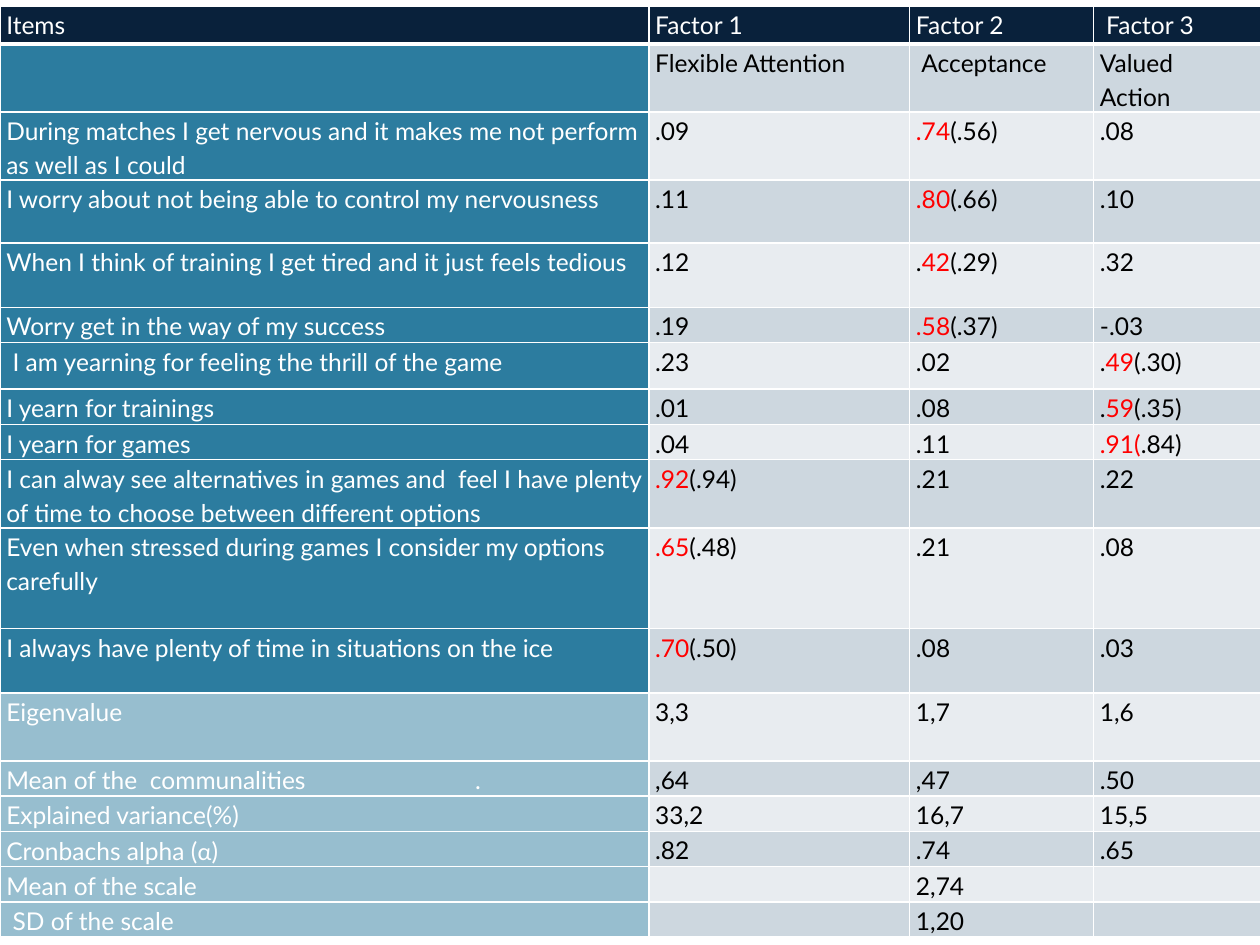
from lxml import etree
from pptx import Presentation
from pptx import util as u
from pptx.dml.color import RGBColor
from pptx.enum import text
from pptx.oxml import ns

WHITE = RGBColor(0xFF, 0xFF, 0xFF)
BLACK = RGBColor(0x00, 0x00, 0x00)
RED = RGBColor(0xFF, 0x00, 0x00)
NAVY = RGBColor(0x09, 0x21, 0x3B)
TEAL = RGBColor(0x2C, 0x7C, 0x9F)
DARK_BAND = RGBColor(0xCD, 0xD7, 0xDF)
LIGHT_BAND = RGBColor(0xE8, 0xEC, 0xF0)

FONT_SIZE = 14
COLUMN_WIDTHS = [5.15, 2.07, 1.46, 1.33]
FIRST_SUMMARY_ROW = 12
PERIOD_TAB = 3.72

# Row height, item, factor 1, factor 2, factor 3; bars enclose accented text.
ROWS = [
    (0.30, "Items", "Factor 1", "Factor 2", " Factor 3"),
    (0.54, "", "Flexible Attention", " Acceptance", "Valued\nAction"),
    (0.54, "During matches I get nervous and it makes me not perform as well as I could",
     ".09", "|.74|(.56)", ".08"),
    (0.50, "I worry about not being able to control my nervousness",
     ".11", "|.80|(.66)", ".10"),
    (0.51, "When I think of training I get tired and it just feels tedious",
     ".12", ".|42|(.29)", ".32"),
    (0.28, "Worry get in the way of my success", ".19", "|.58|(.37)", "-.03"),
    (0.37, " I am yearning for feeling the thrill of the game",
     ".23", ".02", ".|49|(.30)"),
    (0.28, "I yearn for trainings", ".01", ".08", ".|59|(.35)"),
    (0.28, "I yearn for games", ".04", ".11", "|.91(|.84)"),
    (0.54, "I can alway see alternatives in games and  feel I have plenty of time "
     "to choose between different options", "|.92|(.94)", ".21", ".22"),
    (0.80, "Even when stressed during games I consider my options carefully",
     "|.65|(.48)", ".21", ".08"),
    (0.51, "I always have plenty of time in situations on the ice",
     "|.70|(.50)", ".08", ".03"),
    (0.54, "Eigenvalue", "3,3", "1,7", "1,6"),
    (0.28, "Mean of the  communalities\t.", ",64", ",47", ".50"),
    (0.28, "Explained variance(%)", "33,2", "16,7", "15,5"),
    (0.28, "Cronbachs alpha (|α|)", ".82", ".74", ".65"),
    (0.28, "Mean of the scale", "", "2,74", ""),
    (0.28, " SD of the scale", "", "1,20", ""),
]


def write_text(frame, content, color=BLACK, accent_color=RED, font="Lato",
               accent_font="Lato", align=text.PP_ALIGN.JUSTIFY):
    """Write one paragraph a line; text between bars takes the accent format."""
    for number, line in enumerate(content.split("\n")):
        paragraph = frame.add_paragraph() if number else frame.paragraphs[0]
        paragraph.alignment = align
        paragraph.line_spacing = 1.15
        for part, words in enumerate(line.split("|")):
            if not words:
                continue
            run = paragraph.add_run()
            run.text = words
            run.font.size = u.Pt(FONT_SIZE)
            run.font.bold = False
            run.font.name = accent_font if part % 2 else font
            run.font.color.rgb = accent_color if part % 2 else color
        if not line:
            paragraph._p.get_or_add_endParaRPr().set("sz", str(FONT_SIZE * 100))


def add_tab_stop(paragraph, inches):
    stops = etree.SubElement(paragraph._p.get_or_add_pPr(), ns.qn("a:tabLst"))
    etree.SubElement(stops, ns.qn("a:tab"), pos=str(u.Inches(inches)), algn="l")


def fill_cell(cell, color, opacity=100):
    cell.fill.solid()
    cell.fill.fore_color.rgb = color
    if opacity < 100:
        color_node = next(cell._tc.tcPr.iter(ns.qn("a:srgbClr")))
        etree.SubElement(color_node, ns.qn("a:alpha"), val=str(opacity * 1000))


def set_borders(cell, bottom=1):
    """Draw white borders; they have to stand before the fill."""
    properties = cell._tc.get_or_add_tcPr()
    for index, (side, width) in enumerate(
            [("L", 1), ("R", 1), ("T", 1), ("B", bottom)]):
        line = etree.Element(ns.qn(f"a:ln{side}"), w=str(u.Pt(width)))
        solid = etree.SubElement(line, ns.qn("a:solidFill"))
        etree.SubElement(solid, ns.qn("a:srgbClr"), val=str(WHITE))
        properties.insert(index, line)


def format_cell(cell, row, column, content):
    is_header, is_label = row == 0, column == 0
    cell.margin_left = cell.margin_right = u.Inches(0.05)
    cell.margin_top = cell.margin_bottom = 0
    if is_header:
        fill_cell(cell, NAVY)
        write_text(cell.text_frame, content, color=WHITE)
    elif is_label:
        fill_cell(cell, TEAL, opacity=49 if row >= FIRST_SUMMARY_ROW else 100)
        write_text(cell.text_frame, content, color=WHITE, accent_color=WHITE,
                   accent_font="Calibri", align=text.PP_ALIGN.LEFT)
    else:
        fill_cell(cell, DARK_BAND if row % 2 else LIGHT_BAND)
        write_text(cell.text_frame, content)
    if "\t" in content:
        add_tab_stop(cell.text_frame.paragraphs[0], PERIOD_TAB)
    set_borders(cell, bottom=3 if is_header else 1)


def add_factor_table(slide):
    total_height = sum(row[0] for row in ROWS)
    table = slide.shapes.add_table(
        len(ROWS), len(COLUMN_WIDTHS), 0, u.Inches(0.05),
        u.Inches(sum(COLUMN_WIDTHS)), u.Inches(total_height)).table
    for column, width in zip(table.columns, COLUMN_WIDTHS):
        column.width = u.Inches(width)
    for row, (height, *contents) in enumerate(ROWS):
        table.rows[row].height = u.Inches(height)
        for column, content in enumerate(contents):
            format_cell(table.cell(row, column), row, column, content)


def main():
    deck = Presentation()
    deck.slide_width, deck.slide_height = u.Inches(10), u.Inches(7.5)
    slide = deck.slides.add_slide(deck.slide_layouts[6])
    add_factor_table(slide)
    deck.save("out.pptx")


if __name__ == "__main__":
    main()
